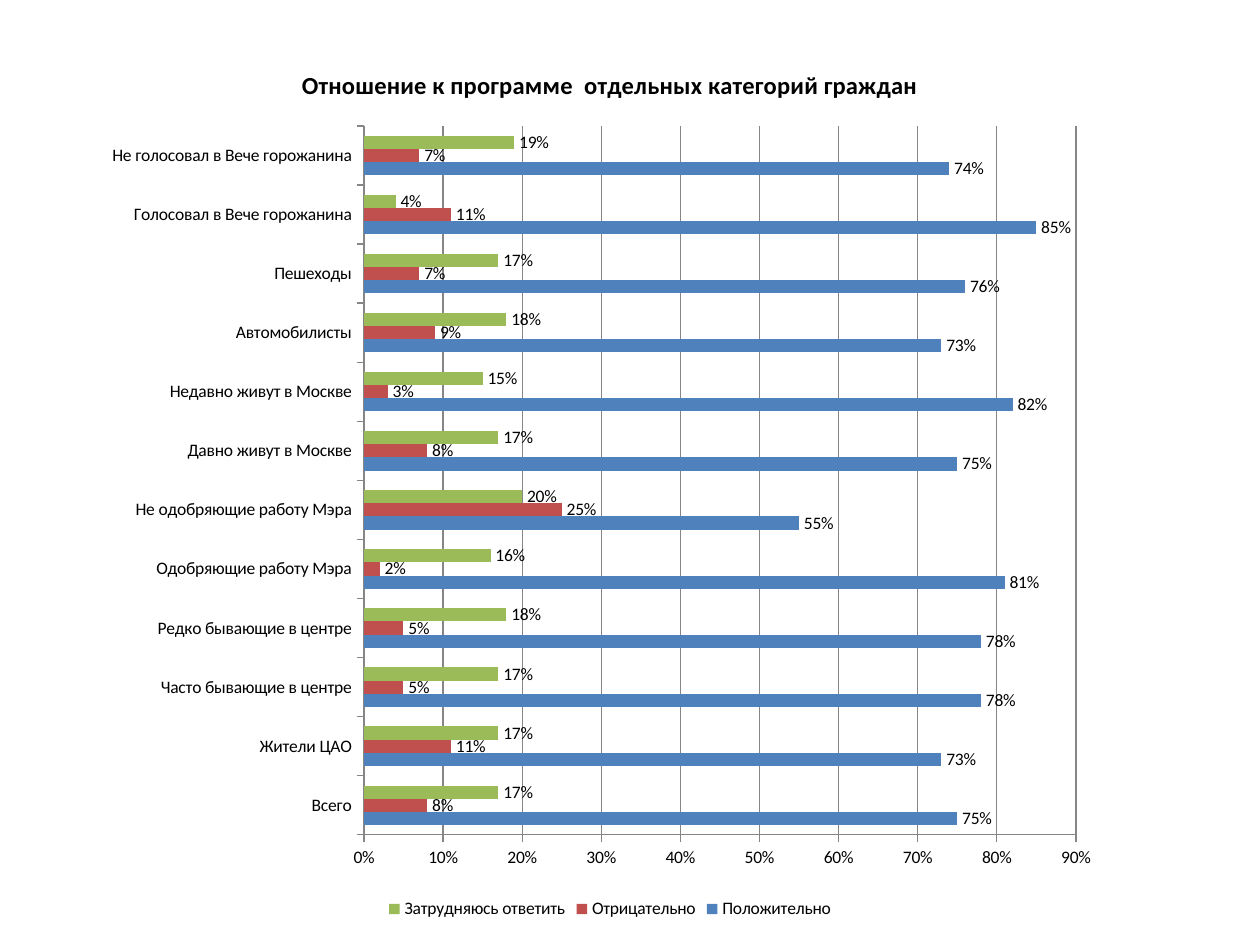
from lxml.etree import SubElement
from pptx import Presentation
from pptx.chart.data import CategoryChartData as Data
from pptx.dml.color import RGBColor
from pptx.enum.chart import XL_CHART_TYPE as Kind
from pptx.enum.chart import XL_LABEL_POSITION as Spot
from pptx.enum.chart import XL_LEGEND_POSITION as Side
from pptx.enum.chart import XL_TICK_MARK as Tick
from pptx.oxml.ns import qn
from pptx.util import Pt

PX = 914400 // 126
TITLE = "Отношение к программе  отдельных категорий граждан"
GROUPS = [
    "Всего", "Жители ЦАО", "Часто бывающие в центре",
    "Редко бывающие в центре", "Одобряющие работу Мэра",
    "Не одобряющие работу Мэра", "Давно живут в Москве",
    "Недавно живут в Москве", "Автомобилисты", "Пешеходы",
    "Голосовал в Вече горожанина", "Не голосовал в Вече горожанина",
]
VIEWS = [
    ("Положительно", "4F81BD",
     [.75, .73, .78, .78, .81, .55, .75, .82, .73, .76, .85, .74]),
    ("Отрицательно", "C0504D",
     [.08, .11, .05, .05, .02, .25, .08, .03, .09, .07, .11, .07]),
    ("Затрудняюсь ответить", "9BBB59",
     [.17, .17, .17, .18, .16, .2, .17, .15, .18, .17, .04, .19]),
]


def paint(fmt, tone):
    """Set a fill or font colour from a hex string."""
    if hasattr(fmt, "solid"):
        fmt.solid()
        fmt.fore_color.rgb = RGBColor.from_string(tone)
    else:
        fmt.color.rgb = RGBColor.from_string(tone)


def style(font, size=10, bold=False, tone="000000", face="Calibri"):
    """Format a font."""
    font.size, font.bold, font.name = Pt(size), bold, face
    paint(font, tone)


def write(frame, text, **look):
    """Put formatted text in a frame."""
    frame.text = text
    style(frame.paragraphs[0].runs[0].font, **look)


def rule(line, tone="868686"):
    """Draw a thin axis or grid line."""
    line.width = Pt(0.75)
    paint(line.fill, tone)


def place(chart, x, y, w, h):
    """Fix the inner plot area as shares of the chart."""
    area = chart.plots[0]._element.getparent()
    for old in area.findall(qn("c:layout")):
        area.remove(old)
    layout = SubElement(area, qn("c:layout"))
    area.insert(0, layout)
    manual = SubElement(layout, qn("c:manualLayout"))
    parts = {"layoutTarget": "inner", "xMode": "edge", "yMode": "edge",
             "x": x, "y": y, "w": w, "h": h}
    for tag, val in parts.items():
        SubElement(manual, qn(f"c:{tag}")).set("val", str(val))


def add_bars(slide, x, y, w, h):
    """Add the chart of views by group in the given box."""
    data = Data(number_format="0%")
    data.categories = GROUPS
    for name, _, vals in VIEWS:
        data.add_series(name, vals)
    box = [n * PX for n in (x, y, w, h)]
    chart = slide.shapes.add_chart(Kind.BAR_CLUSTERED, *box, data).chart
    style(chart.font)
    write(chart.chart_title.text_frame, TITLE, size=14, bold=True)
    chart.chart_title.include_in_layout = False
    chart.has_legend = True
    chart.legend.position = Side.BOTTOM
    chart.legend.include_in_layout = False
    place(chart, 256 / w, 87 / h, 712 / w, 709 / h)

    for axis in (chart.category_axis, chart.value_axis):
        axis.major_tick_mark = Tick.OUTSIDE
        axis.minor_tick_mark = Tick.NONE
        rule(axis.format.line)
    scale = chart.value_axis
    scale.minimum_scale, scale.maximum_scale, scale.major_unit = 0, 0.9, 0.1
    scale.has_major_gridlines = True
    rule(scale.major_gridlines.format.line)
    scale.tick_labels.number_format = "0%"
    scale.tick_labels.number_format_is_linked = False

    plot = chart.plots[0]
    plot.gap_width, plot.overlap, plot.vary_by_categories = 150, 0, False
    for bar, (_, tone, _) in zip(plot.series, VIEWS):
        paint(bar.format.fill, tone)
        bar.invert_if_negative = False
        tags = bar.data_labels
        tags.show_value = True
        tags.number_format = "0%"
        tags.number_format_is_linked = False
        tags.position = Spot.OUTSIDE_END
        style(tags.font)


def main():
    """Build and save the slide."""
    deck = Presentation()
    deck.slide_width, deck.slide_height = 1260 * PX, 945 * PX
    slide = deck.slides.add_slide(deck.slide_layouts[6])
    add_bars(slide, 108, 39, 1004, 885)
    deck.save("out.pptx")


if __name__ == "__main__":
    main()
